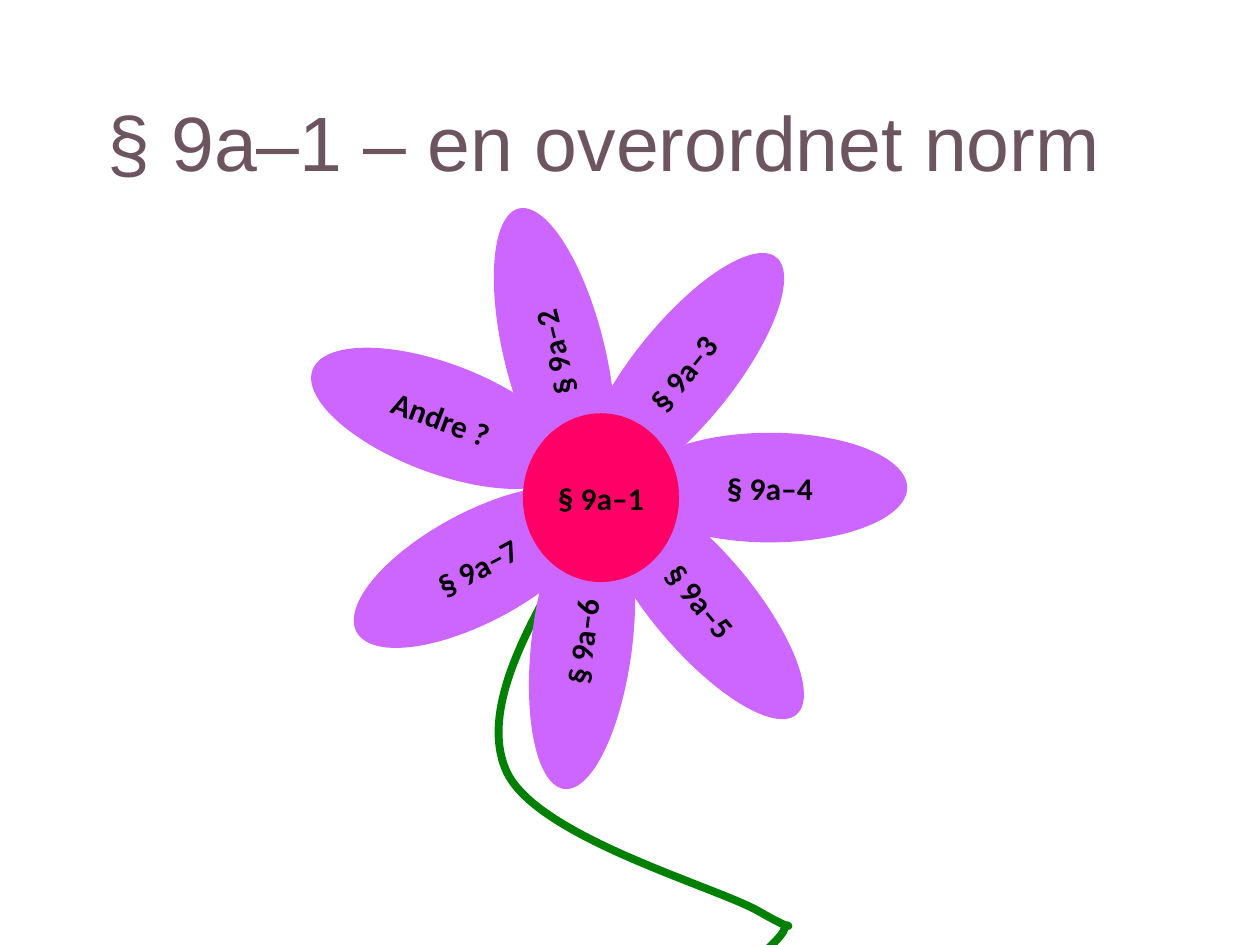
from dataclasses import dataclass

import pptx
import pptx.dml.color
import pptx.enum.shapes
import pptx.enum.text
import pptx.oxml
import pptx.oxml.ns
import pptx.util

Inches = pptx.util.Inches
COLORS = {
    "petal": "CC66FF",
    "center": "FF0066",
    "stem": "008000",
    "label": "000000",
    "title": "6D5560",
}


def rgb(name: str) -> pptx.dml.color.RGBColor:
    return pptx.dml.color.RGBColor.from_string(COLORS[name])


@dataclass
class Oval:
    text: str
    cx: float
    cy: float
    width: float
    height: float
    rotation: float = 0
    color: str = "petal"


WIDE = (2.18, 0.87)
SLIM = (2.36, 0.8)
FLOWER = [
    Oval("Andre ?", 3.5, 3.32, *WIDE, 20.7),
    Oval("§ 9a–4", 6.11, 3.87, *WIDE),
    Oval("§ 9a–2", 4.4, 2.8, *SLIM, 256.1),
    Oval("§ 9a–3", 5.42, 2.96, *SLIM, 308.9),
    Oval("§ 9a–5", 5.56, 4.77, *SLIM, 49.8),
    Oval("§ 9a–6", 4.62, 5.09, *SLIM, 276.9),
    Oval("§ 9a–7", 3.79, 4.5, *WIDE, 331.8),
    Oval("§ 9a–1", 4.77, 3.95, 1.24, 1.34, color="center"),
]

# Start point, then two control points and an end point per curve
STEM = [
    (4.85, 4.07),
    (4.34, 4.78), (3.82, 5.49), (4, 6.03),
    (4.18, 6.57), (5.56, 7.07), (5.91, 7.3),
    (6.26, 7.54), (6.11, 7.38), (6.11, 7.45),
    (6.11, 7.51), (5.89, 7.65), (5.88, 7.7),
]


def format_run(r, size: int, font: str, color: str, bold: bool = False) -> None:
    r.font.size = pptx.util.Pt(size)
    r.font.name = font
    r.font.bold = bold
    r.font.color.rgb = rgb(color)


def add_stem(s, points: list, rotation: float) -> None:
    pts = [(Inches(x), Inches(y)) for x, y in points]
    builder = s.shapes.build_freeform(*pts[0], scale=1.0)
    builder.add_line_segments(pts[1:], close=False)
    sp = builder.convert_to_shape()
    sp.shadow.inherit = False
    sp.rotation = rotation
    sp.fill.background()
    sp.line.color.rgb = rgb("stem")
    sp.line.width = pptx.util.Pt(4.5)

    # Turn every three line segments into one Bezier curve
    qn = pptx.oxml.ns.qn
    lines = list(sp._element.iter(qn("a:lnTo")))
    for i in range(0, len(lines), 3):
        curve = pptx.oxml.parse_xml(
            f"<a:cubicBezTo {pptx.oxml.ns.nsdecls('a')}/>")
        lines[i].addprevious(curve)
        for line in lines[i:i + 3]:
            curve.append(line[0])
            line.getparent().remove(line)


def add_oval(s, oval: Oval) -> None:
    sp = s.shapes.add_shape(
        pptx.enum.shapes.MSO_SHAPE.OVAL,
        Inches(oval.cx - oval.width / 2), Inches(oval.cy - oval.height / 2),
        Inches(oval.width), Inches(oval.height))
    sp.shadow.inherit = False
    sp.rotation = oval.rotation
    sp.fill.solid()
    sp.fill.fore_color.rgb = rgb(oval.color)
    sp.line.fill.background()
    tf = sp.text_frame
    tf.text = oval.text
    tf.word_wrap = False
    tf.vertical_anchor = pptx.enum.text.MSO_ANCHOR.MIDDLE
    p = tf.paragraphs[0]
    p.alignment = pptx.enum.text.PP_ALIGN.CENTER
    format_run(p.runs[0], 18, "Calibri", "label", bold=True)


def add_title(s, text: str) -> None:
    sp = s.shapes.title
    sp.left, sp.top = Inches(0.75), Inches(0.45)
    sp.width, sp.height = Inches(8.57), Inches(1.34)
    tf = sp.text_frame
    tf.text = text
    tf.vertical_anchor = pptx.enum.text.MSO_ANCHOR.MIDDLE
    p = tf.paragraphs[0]
    p.alignment = pptx.enum.text.PP_ALIGN.LEFT
    format_run(p.runs[0], 44, "Arial", "title")


def main() -> None:
    prs = pptx.Presentation()
    prs.slide_width, prs.slide_height = Inches(10), Inches(7.5)
    s = prs.slides.add_slide(prs.slide_layouts[5])
    add_title(s, "§ 9a–1 – en overordnet norm")

    # Flower: stem at the back, then petals, then the center
    add_stem(s, STEM, 355.6)
    for oval in FLOWER:
        add_oval(s, oval)
    prs.save("out.pptx")


if __name__ == "__main__":
    main()
